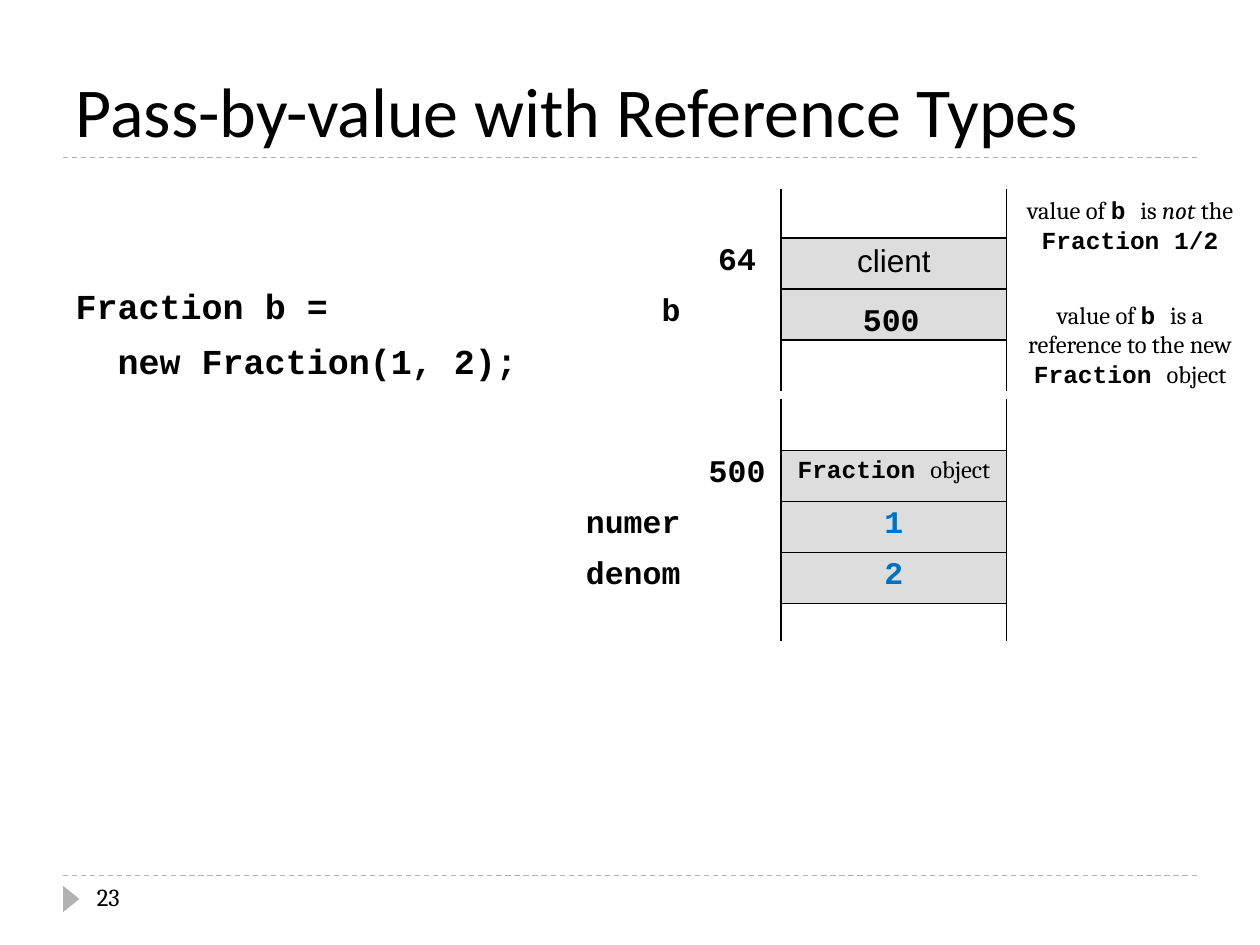
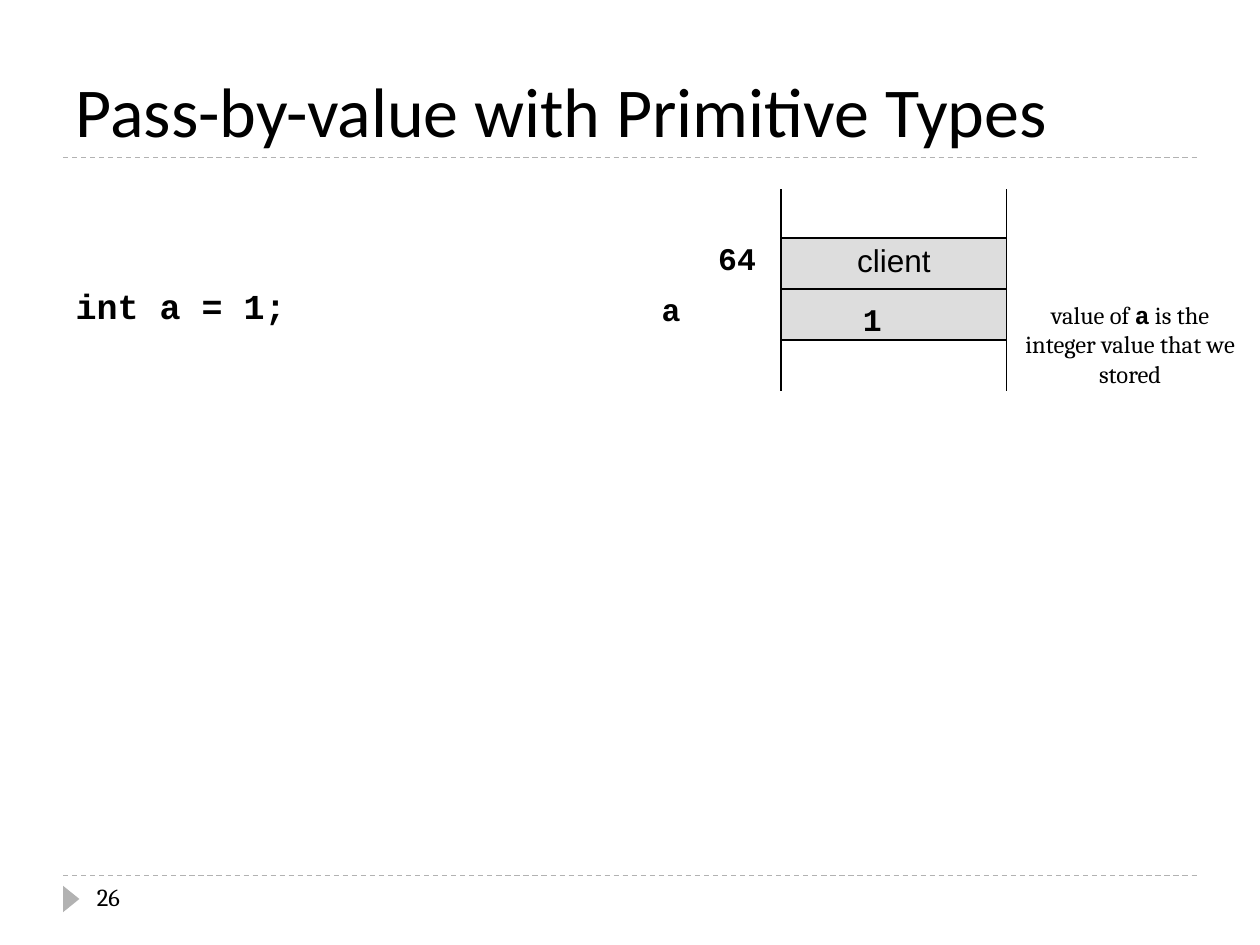
"""Build two slides on pass-by-value with stack and heap memory diagrams."""
from dataclasses import dataclass, replace

from lxml import etree
from pptx import Presentation, util
from pptx.dml.color import RGBColor
from pptx.enum import dml, shapes, text
from pptx.oxml import ns


@dataclass(frozen=True)
class Type:
    """A typeface, size and colour for a run."""
    font: str
    size: int
    color: str = "000000"
    bold: bool = False
    italic: bool = False


@dataclass(frozen=True)
class Theme:
    """Colours and type sizes that all slides share."""
    rule: str = "B2B2B2"
    memory: str = "DDDDDD"
    border: str = "000000"
    title: Type = Type("Calibri", 40)
    code: Type = Type("Courier New", 20, bold=True)
    label: Type = Type("Courier New", 18, bold=True)
    field: Type = Type("Courier New", 18, "0070C0", bold=True)
    owner: Type = Type("Arial", 18)
    note: Type = Type("Cambria", 14)
    note_code: Type = Type("Courier New", 14, bold=True)


THEME = Theme()
NOT_EMPHASIS = replace(THEME.note, italic=True)
COLUMNS, ROWS = 20, 15
MEMORY_COLUMNS = (2.34, 1.4, 3.58)
MEMORY_LEFT = 8.66
ROW = 0.81
STACK_TOP, HEAP_TOP = 3, 6.34
NO_TABLE_STYLE = "{2D5ABB26-0587-4C30-8999-92F81FD0307C}"
LEFT, CENTER, RIGHT = (text.PP_ALIGN.LEFT, text.PP_ALIGN.CENTER,
                       text.PP_ALIGN.RIGHT)


def grid(*units):
    """Turn grid units of half an inch into lengths."""
    return [util.Inches(unit / 2) for unit in units]


def write(paragraph, runs, align=LEFT):
    """Fill a paragraph with (text, type) runs."""
    paragraph.alignment = align
    for words, style in runs:
        run = paragraph.add_run()
        run.text = words
        font = run.font
        font.name, font.size = style.font, util.Pt(style.size)
        font.bold, font.italic = style.bold, style.italic
        font.color.rgb = RGBColor.from_string(style.color)


def write_lines(frame, lines, align=LEFT):
    """Write one paragraph per line of runs."""
    for index, runs in enumerate(lines):
        paragraph = frame.add_paragraph() if index else frame.paragraphs[0]
        write(paragraph, runs, align)


def move(placeholder, *place):
    """Set a placeholder's place and stop it from shrinking its text."""
    (placeholder.left, placeholder.top,
     placeholder.width, placeholder.height) = grid(*place)
    placeholder.text_frame.auto_size = text.MSO_AUTO_SIZE.NONE
    return placeholder.text_frame


def add_text(slide, place, lines, align=LEFT, wrap=True):
    """Add a text box."""
    frame = slide.shapes.add_textbox(*grid(*place)).text_frame
    frame.word_wrap = wrap
    write_lines(frame, lines, align)


def add_rule(slide, row):
    """Add a dashed rule across the slide's content width."""
    rule = slide.shapes.add_connector(
        shapes.MSO_CONNECTOR.STRAIGHT, *grid(1, row, COLUMNS - 1, row))
    rule.line.color.rgb = RGBColor.from_string(THEME.rule)
    rule.line.width = util.Pt(0.75)
    rule.line.dash_style = dml.MSO_LINE.DASH
    etree.SubElement(rule._element.spPr, ns.qn("a:effectLst"))


def add_frame(slide, heading, number):
    """Add the title, rules and page marker that each slide carries."""
    add_rule(slide, 13.9)
    add_rule(slide, 2.5)
    marker = slide.shapes.add_shape(
        shapes.MSO_SHAPE.ISOSCELES_TRIANGLE, *grid(0.92, 14.14, 0.42, 0.26))
    marker.rotation = 90
    marker.shadow.inherit = False
    marker.fill.solid()
    marker.fill.fore_color.rgb = RGBColor.from_string(THEME.rule)
    marker.line.fill.background()
    title = move(slide.shapes.title, 1, 0.34, 18, 2.16)
    title.vertical_anchor = text.MSO_ANCHOR.BOTTOM
    write(title.paragraphs[0], [(heading, THEME.title)])
    add_text(slide, (1.34, 13.9, 4.34, 0.8), [[(str(number), THEME.note)]])


def add_code(slide, lines):
    """Write code into the body, each line after the first indented."""
    frame = move(slide.placeholders[1], 1, 2.66, 18, 10.8)
    frame.margin_top, = grid(1.86)
    write_lines(frame, [[(line, THEME.code)] for line in lines])
    for index, paragraph in enumerate(frame.paragraphs):
        paragraph.space_before = util.Pt(7 if index else 0)
        properties = paragraph._p.get_or_add_pPr()
        properties.set("marL", str(util.Pt(24) if index else 0))
        properties.set("indent", "0")
        etree.SubElement(properties, ns.qn("a:buNone"))


def add_borders(cell, sides):
    """Draw the named sides of a cell."""
    properties = cell._tc.get_or_add_tcPr()
    for side in "LRTB":
        if side in sides:
            line = etree.SubElement(properties, ns.qn(f"a:ln{side}"),
                                    w=str(util.Pt(1)))
            fill = etree.SubElement(line, ns.qn("a:solidFill"))
            etree.SubElement(fill, ns.qn("a:srgbClr"), val=THEME.border)


def add_memory(slide, top, heights, blocks):
    """Add a memory table of (name, address, value runs) between open ends."""
    rows = [("", "", []), *blocks, ("", "", [])]
    table_frame = slide.shapes.add_table(
        len(rows), len(MEMORY_COLUMNS),
        *grid(MEMORY_LEFT, top, sum(MEMORY_COLUMNS), sum(heights)))
    table = table_frame.table
    table.first_row = table.horz_banding = False
    table._tbl.tblPr.find(ns.qn("a:tableStyleId")).text = NO_TABLE_STYLE
    for column, width in zip(table.columns, grid(*MEMORY_COLUMNS)):
        column.width = width
    for row, height in zip(table.rows, grid(*heights)):
        row.height = height
    last = len(rows) - 1
    for index, (name, address, value) in enumerate(rows):
        value_sides = {0: "LRB", last: "LRT"}.get(index, "LRTB")
        contents = (([(name, THEME.label)] if name else [], RIGHT, ""),
                    ([(address, THEME.label)] if address else [], CENTER, "R"),
                    (value, CENTER, value_sides))
        for column, (runs, align, sides) in enumerate(contents):
            cell = table.cell(index, column)
            add_borders(cell, sides)
            if value_sides == sides == "LRTB":
                cell.fill.solid()
                cell.fill.fore_color.rgb = RGBColor.from_string(THEME.memory)
            else:
                cell.fill.background()
            if runs:
                write(cell.text_frame.paragraphs[0], runs, align)
            else:
                cell.margin_top = cell.margin_bottom = 0


def add_stack(slide, variable, value):
    """Add the client's memory with one variable and its value."""
    add_memory(slide, STACK_TOP, (0.78, ROW, ROW, ROW),
               [("", "64", [("client", THEME.owner)]), (variable, "", [])])
    add_text(slide, (13.5, 4.66, 0.4 + 0.3 * len(value), 0.8),
             [[(value, THEME.label)]], wrap=False)


def add_note(slide, top, height, lines):
    """Add a centred remark to the right of the memory."""
    add_text(slide, (16.04, top, 3.8, height), lines, CENTER)


def build_reference(slide):
    """Show a variable that holds a reference."""
    add_frame(slide, "Pass-by-value with Reference Types", 23)
    add_code(slide, ["Fraction b =", "new Fraction(1, 2);"])
    add_stack(slide, "b", "500")
    add_memory(slide, HEAP_TOP, (ROW, ROW, ROW, ROW, 0.6), [
        ("", "500", [("Fraction ", THEME.note_code), ("object", THEME.note)]),
        ("numer", "", [("1", THEME.field)]),
        ("denom", "", [("2", THEME.field)])])
    add_note(slide, 4.66, 2.08, [
        [("value of ", THEME.note), ("b ", THEME.note_code),
         ("is a reference to the new", THEME.note)],
        [("Fraction ", THEME.note_code), ("object", THEME.note)]])
    add_note(slide, STACK_TOP, 1.14, [
        [("value of ", THEME.note), ("b ", THEME.note_code),
         ("is ", THEME.note), ("not", NOT_EMPHASIS), (" the", THEME.note)],
        [("Fraction 1/2", THEME.note_code)]])


def build_primitive(slide):
    """Show a variable that holds a plain value."""
    add_frame(slide, "Pass-by-value with Primitive Types", 26)
    add_code(slide, ["int a = 1;"])
    add_stack(slide, "a", "1")
    add_note(slide, 4.66, 1.62, [
        [("value of ", THEME.note), ("a", THEME.note_code),
         (" is the", THEME.note)],
        [("integer value that we stored", THEME.note)]])


def main():
    """Build and save the deck."""
    deck = Presentation()
    deck.slide_width, deck.slide_height = grid(COLUMNS, ROWS)
    for build in (build_reference, build_primitive):
        build(deck.slides.add_slide(deck.slide_layouts[1]))
    deck.save("out.pptx")


if __name__ == "__main__":
    main()
